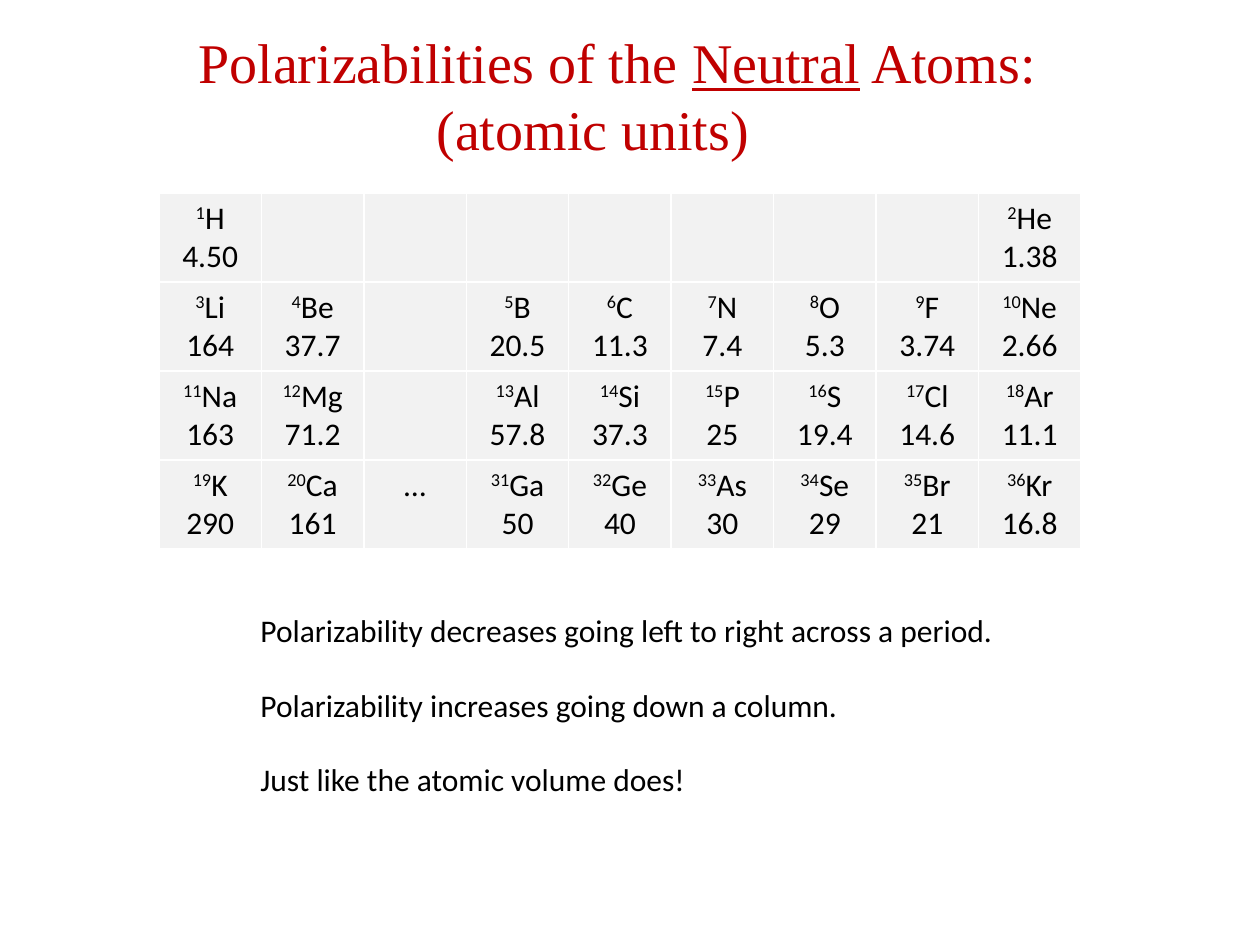
from pptx import Presentation
from pptx.dml.color import RGBColor
from pptx.enum.text import MSO_ANCHOR, PP_ALIGN
from pptx.util import Pt

TITLE = [
    [("Polarizabilities of the ", {}), ("Neutral", {"underline": True}), (" Atoms:", {})],
    [("(atomic units)", {})],
]
ELEMENTS = [
    ["1 H 4.50", "", "", "", "", "", "", "", "2 He 1.38"],
    ["3 Li 164", "4 Be 37.7", "", "5 B 20.5", "6 C 11.3", "7 N 7.4", "8 O 5.3", "9 F 3.74", "10 Ne 2.66"],
    ["11 Na 163", "12 Mg 71.2", "", "13 Al 57.8", "14 Si 37.3", "15 P 25", "16 S 19.4", "17 Cl 14.6", "18 Ar 11.1"],
    ["19 K 290", "20 Ca 161", "…", "31 Ga 50", "32 Ge 40", "33 As 30", "34 Se 29", "35 Br 21", "36 Kr 16.8"],
]
TRENDS = [
    "Polarizability decreases going left to right across a period.",
    "Polarizability increases going down a column.",
    "Just like the atomic volume does!",
]
TITLE_FONT = {"name": "Times New Roman", "size": Pt(32), "color": "C00000"}
BODY_FONT = {"name": "Calibri", "size": Pt(18), "bold": False, "color": "000000"}


def px(length):
    return round(length * 914400 / 126)


def rgb(value):
    return RGBColor.from_string(value)


def add_span(para, text, style):
    span = para.add_run()
    span.text = text
    for name, value in style.items():
        if name == "color":
            span.font.color.rgb = rgb(value)
        else:
            setattr(span.font, name, value)
    return span


def next_para(frame, index):
    return frame.add_paragraph() if index else frame.paragraphs[0]


def add_box(page, *place):
    frame = page.shapes.add_textbox(*map(px, place)).text_frame
    frame.word_wrap = True
    return frame


def add_title(page):
    frame = add_box(page, 186, 37, 864, 115)
    frame.vertical_anchor = MSO_ANCHOR.MIDDLE
    frame.margin_right = 0
    for index, spans in enumerate(TITLE):
        para = next_para(frame, index)
        para._p.get_or_add_pPr().set("marL", str(px(238 * index)))
        for text, extra in spans:
            add_span(para, text, TITLE_FONT | extra)


def fill_cell(cell, entry):
    cell.fill.solid()
    cell.fill.fore_color.rgb = rgb("F2F2F2")
    *number, symbol, value = entry.split() if " " in entry else (entry, "")
    for index, text in enumerate(filter(None, (symbol, value))):
        para = next_para(cell.text_frame, index)
        para.alignment = PP_ALIGN.CENTER
        if number and index == 0:
            raised = add_span(para, number[0], BODY_FONT)
            raised.font._element.set("baseline", "30000")
        add_span(para, text, BODY_FONT)


def add_elements(page):
    rows, columns = len(ELEMENTS), len(ELEMENTS[0])
    table = page.shapes.add_table(rows, columns, px(159), px(193), px(922), px(89 * rows)).table
    for row, entries in enumerate(ELEMENTS):
        for column, entry in enumerate(entries):
            fill_cell(table.cell(row, column), entry)


def add_trends(page):
    frame = add_box(page, 248, 605, 762, 204)
    for index, text in enumerate(TRENDS):
        para = next_para(frame, index)
        para.space_before = Pt(21 if index else 0)
        add_span(para, text, BODY_FONT)


def main():
    deck = Presentation()
    deck.slide_width, deck.slide_height = px(1260), px(945)
    page = deck.slides.add_slide(deck.slide_layouts[6])
    add_title(page)
    add_elements(page)
    add_trends(page)
    deck.save("out.pptx")


if __name__ == "__main__":
    main()
